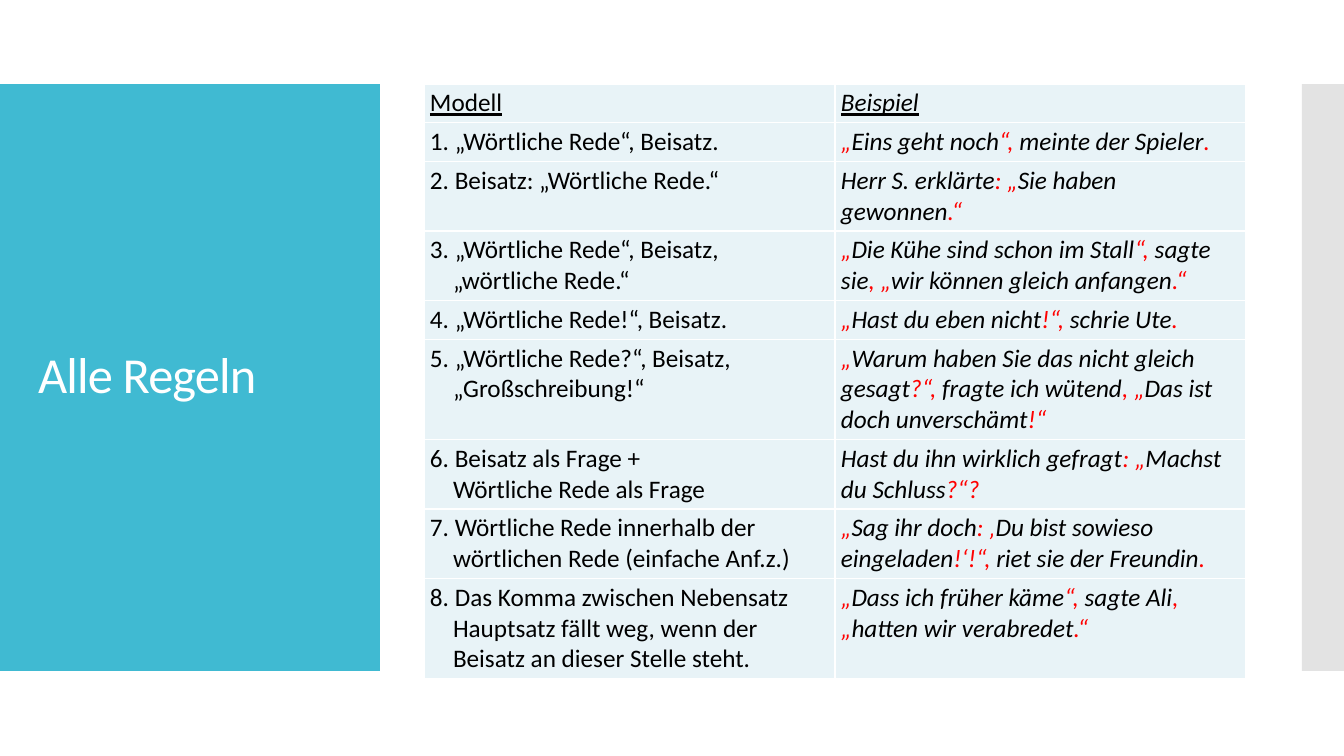
from dataclasses import dataclass

from lxml import etree
from pptx import Presentation
from pptx.dml.color import RGBColor
from pptx.enum import shapes, text
from pptx.oxml import ns
from pptx.util import Pt

# Content: "|" switches between black text and red punctuation
TITLE = "Alle Regeln"
HEADINGS = ("Modell", "Beispiel")
RULES = [
    # model, example, text lines in the row
    ("1. „Wörtliche Rede“, Beisatz.",
     "|„|Eins geht noch|“, |meinte der Spieler|.", 1),
    ("2. Beisatz: „Wörtliche Rede.“",
     "Herr S. erklärte|: „|Sie haben gewonnen|.“", 2),
    ("3. „Wörtliche Rede“, Beisatz,\v„wörtliche Rede.“",
     "|„|Die Kühe sind schon im Stall|“, |sagte sie|, „|wir können gleich anfangen|.“", 2),
    ("4. „Wörtliche Rede!“, Beisatz.",
     "|„|Hast du eben nicht|!“,| schrie Ute|.", 1),
    ("5. „Wörtliche Rede?“, Beisatz,\v„Großschreibung!“",
     "|„|Warum haben Sie das nicht gleich gesagt|?“, |fragte ich wütend|, „|"
     "Das ist doch unverschämt|!“", 3),
    ("6. Beisatz als Frage +\vWörtliche Rede als Frage",
     "Hast du ihn wirklich gefragt|: „|Machst du Schluss|?“?", 2),
    ("7. Wörtliche Rede innerhalb der\vwörtlichen Rede (einfache Anf.z.)",
     "|„|Sag ihr doch|: ‚|Du bist sowieso eingeladen|!‘!“, |riet sie der Freundin|.", 2),
    ("8. Das Komma zwischen Nebensatz\vHauptsatz fällt weg, wenn der\v"
     "Beisatz an dieser Stelle steht.",
     "|„|Dass ich früher käme|“, |sagte Ali|,\n|„|hatten wir verabredet|.“", 3),
]


@dataclass(frozen=True)
class Theme:
    font: str = "Calibri"
    title_size: int = 36
    body_size: int = 18
    panel: str = "40BAD2"
    strip: str = "C8C8C8"
    cell: str = "E8F3F7"
    white: str = "FFFFFF"
    black: str = "000000"
    red: str = "FF0000"


THEME = Theme()

# Geometry in px
SLIDE_WIDTH, SLIDE_HEIGHT = 1344, 756
EMU_PER_PX = 12192000 / SLIDE_WIDTH
PANEL = (0, 84, 380, 587)
STRIP = (1302, 84, 42, 587)
TITLE_BOX = (28, 124, 325, 507)
TABLE_LEFT, TABLE_TOP, COLUMN_WIDTH = 424, 84, 411
LINE_HEIGHT, ROW_PADDING = 31, 7
CELL_INSET_X, CELL_INSET_Y = 6, 4
HANGING_INDENT = 23


def px(length):
    return round(length * EMU_PER_PX)


def style_font(font, size, color):
    font.name = THEME.font
    font.size = Pt(size)
    font.color.rgb = RGBColor.from_string(color)


def add_panel(slide, box, color):
    panel = slide.shapes.add_shape(shapes.MSO_SHAPE.RECTANGLE, *map(px, box))
    panel.shadow.inherit = False
    panel.fill.solid()
    panel.fill.fore_color.rgb = RGBColor.from_string(color)
    panel.line.fill.background()
    return panel


def add_title(slide):
    title = slide.shapes.title
    title.left, title.top, title.width, title.height = map(px, TITLE_BOX)
    frame = title.text_frame
    frame.text = TITLE
    frame.word_wrap = True
    frame.auto_size = text.MSO_AUTO_SIZE.NONE
    frame.vertical_anchor = text.MSO_ANCHOR.MIDDLE
    paragraph = frame.paragraphs[0]
    paragraph.alignment = text.PP_ALIGN.LEFT
    paragraph.line_spacing = 0.9
    run = paragraph.runs[0]
    style_font(run.font, THEME.title_size, THEME.white)
    run.font._element.set("spc", "-60")
    # Bring the title in front of the panels
    title.element.getparent().append(title.element)


def style_cell(cell):
    cell.margin_left = cell.margin_right = px(CELL_INSET_X)
    cell.margin_top = cell.margin_bottom = px(CELL_INSET_Y)
    properties = cell._tc.get_or_add_tcPr()
    for side in ("lnL", "lnR", "lnT", "lnB"):
        line = etree.SubElement(properties, ns.qn(f"a:{side}"), w=str(Pt(1)))
        fill = etree.SubElement(line, ns.qn("a:solidFill"))
        etree.SubElement(fill, ns.qn("a:srgbClr"), val=THEME.white)
    cell.fill.solid()
    cell.fill.fore_color.rgb = RGBColor.from_string(THEME.cell)


def write_model(cell, words):
    paragraph = cell.text_frame.paragraphs[0]
    paragraph.text = words
    properties = paragraph._p.get_or_add_pPr()
    properties.set("marL", str(px(HANGING_INDENT)))
    properties.set("indent", str(-px(HANGING_INDENT)))
    for run in paragraph.runs:
        style_font(run.font, THEME.body_size, THEME.black)


def write_example(cell, words):
    frame = cell.text_frame
    for number, line in enumerate(words.split("\n")):
        paragraph = frame.add_paragraph() if number else frame.paragraphs[0]
        for index, part in enumerate(line.split("|")):
            if part:
                run = paragraph.add_run()
                run.text = part
                style_font(run.font, THEME.body_size, THEME.red if index % 2 else THEME.black)
                run.font.italic = True


def add_rules_table(slide):
    rows = [(*HEADINGS, 1), *RULES]
    heights = [px(lines * LINE_HEIGHT + ROW_PADDING) for _, _, lines in rows]
    table = slide.shapes.add_table(
        len(rows), 2, px(TABLE_LEFT), px(TABLE_TOP), px(2 * COLUMN_WIDTH), sum(heights)).table
    table.first_row = table.horz_banding = False
    for column in table.columns:
        column.width = px(COLUMN_WIDTH)
    for index, (model, example, _) in enumerate(rows):
        table.rows[index].height = heights[index]
        model_cell, example_cell = table.rows[index].cells
        style_cell(model_cell)
        style_cell(example_cell)
        write_model(model_cell, model)
        write_example(example_cell, example)
    for cell in table.rows[0].cells:
        cell.text_frame.paragraphs[0].runs[0].font.underline = True


def main():
    presentation = Presentation()
    presentation.slide_width, presentation.slide_height = px(SLIDE_WIDTH), px(SLIDE_HEIGHT)
    slide = presentation.slides.add_slide(presentation.slide_layouts[5])

    # Side panels, the right one half transparent
    add_panel(slide, PANEL, THEME.panel)
    strip = add_panel(slide, STRIP, THEME.strip)
    strip_color = strip.element.spPr.find(".//" + ns.qn("a:srgbClr"))
    etree.SubElement(strip_color, ns.qn("a:alpha"), val="50000")

    # Title and table of rules
    add_title(slide)
    add_rules_table(slide)
    presentation.save("out.pptx")


if __name__ == "__main__":
    main()
